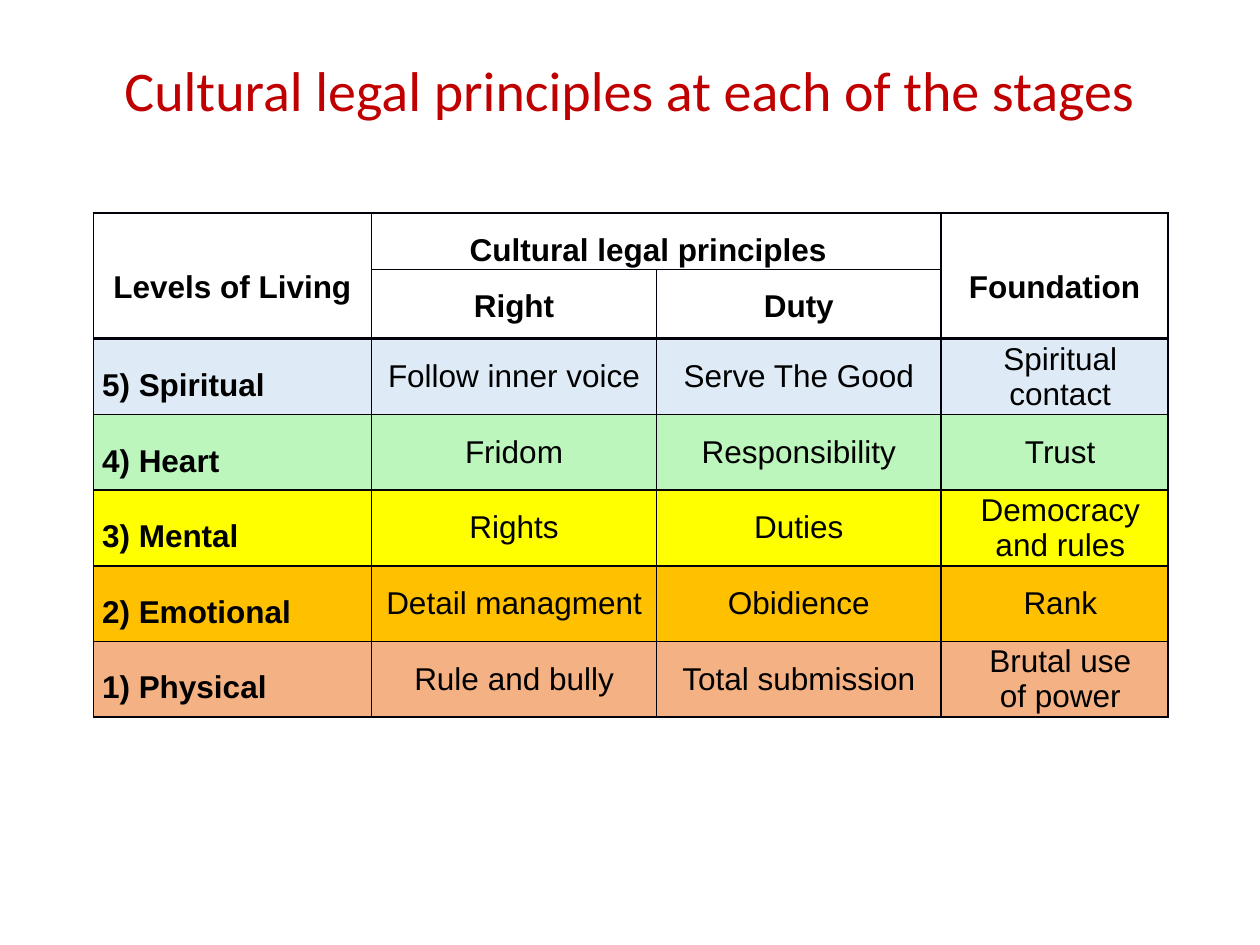
from lxml.etree import SubElement
from pptx import Presentation
from pptx.dml.color import RGBColor
from pptx.enum.text import MSO_ANCHOR, PP_ALIGN
from pptx.oxml.ns import qn
from pptx.util import Inches, Pt

TITLE = "Cultural legal principles at each of the stages"
COLUMN_WIDTHS = [2.21, 2.26, 2.26, 1.8]
BORDER = "00000A"
STAGES = [
    ("DEEBF7", "5) Spiritual", "Follow inner voice", "Serve The Good", "Spiritual contact"),
    ("BCF6BD", "4) Heart", "Fridom", "Responsibility", "Trust"),
    ("FFFF00", "3) Mental", "Rights", "Duties", "Democracy and rules"),
    ("FFC000", "2) Emotional", "Detail managment", "Obidience", "Rank"),
    ("F4B183", "1) Physical", "Rule and bully", "Total submission", "Brutal use\vof power"),
]


def color(hex_value):
    return RGBColor.from_string(hex_value)


def apply(target, formats):
    for name, value in formats.items():
        setattr(target, name, value)


def add_borders(cell):
    properties = cell._tc.get_or_add_tcPr()
    for position, side in enumerate(("a:lnL", "a:lnR", "a:lnT", "a:lnB")):
        line = SubElement(properties, qn(side), w=str(Pt(1)))
        solid = SubElement(line, qn("a:solidFill"))
        SubElement(solid, qn("a:srgbClr"), val=BORDER)
        properties.remove(line)
        properties.insert(position, line)  # borders come before the fill


def add_grid(slide, left, top, width, row_heights):
    """Add an unstyled, bordered table with the shared columns."""
    frame = slide.shapes.add_table(
        len(row_heights), len(COLUMN_WIDTHS), Inches(left), Inches(top),
        Inches(width), Inches(sum(row_heights)))
    table = frame.table
    apply(table, {"first_row": False, "horz_banding": False})
    for column, column_width in zip(table.columns, COLUMN_WIDTHS):
        column.width = Inches(column_width)
    for row, height in zip(table.rows, row_heights):
        row.height = Inches(height)
    for cell in table.iter_cells():
        cell.fill.background()
        apply(cell, {"margin_top": 0, "margin_bottom": 0})
        add_borders(cell)
    return table


def write_cell(cell, text, bold=False, align=PP_ALIGN.CENTER, spacing=1.0,
               left=0.07, right=0.07, top=0):
    apply(cell, {"text": text, "vertical_anchor": MSO_ANCHOR.MIDDLE,
                 "margin_left": Inches(left), "margin_right": Inches(right),
                 "margin_top": Inches(top)})
    paragraph = cell.text_frame.paragraphs[0]
    apply(paragraph, {"alignment": align, "line_spacing": spacing})
    for run in paragraph.runs:
        apply(run.font, {"name": "Arial", "size": Pt(18), "bold": bold})
        run.font.color.rgb = color("000000")


def add_title(slide, left, top, width, height):
    title = slide.shapes.title
    apply(title, {"left": Inches(left), "top": Inches(top),
                  "width": Inches(width), "height": Inches(height)})
    frame = title.text_frame
    apply(frame, {"text": TITLE, "word_wrap": True, "vertical_anchor": MSO_ANCHOR.TOP})
    paragraph = frame.paragraphs[0]
    paragraph.alignment = PP_ALIGN.CENTER
    apply(paragraph.font, {"name": "Calibri", "size": Pt(32)})
    paragraph.font.color.rgb = color("C00000")


def add_header(slide, left, top, width):
    table = add_grid(slide, left, top, width, [0.45, 0.54])
    # Outer headings span both rows, the shared heading spans two columns
    for first, last in (((0, 0), (1, 0)), ((0, 1), (0, 2)), ((0, 3), (1, 3))):
        table.cell(*first).merge(table.cell(*last))
    write_cell(table.cell(0, 0), "Levels of Living", True, spacing=1.5, top=0.05)
    write_cell(table.cell(0, 1), "Cultural legal principles", True, spacing=1.5, right=0.2)
    write_cell(table.cell(0, 3), "Foundation", True, spacing=1.5, left=0.01, right=0.01, top=0.05)
    for column, heading in enumerate(("Right", "Duty"), start=1):
        write_cell(table.cell(1, column), heading, True, top=0.05)


def add_stages(slide, left, top, width):
    table = add_grid(slide, left, top, width, [0.6] * len(STAGES))
    for row, (fill, level, right, duty, foundation) in zip(table.rows, STAGES):
        level_cell, right_cell, duty_cell, foundation_cell = row.cells
        write_cell(level_cell, level, True, PP_ALIGN.LEFT, spacing=1.5)
        write_cell(right_cell, right)
        write_cell(duty_cell, duty)
        write_cell(foundation_cell, foundation, left=0.1, right=0.01)
        for cell in row.cells:
            cell.fill.solid()
            cell.fill.fore_color.rgb = color(fill)


def main():
    presentation = Presentation()
    apply(presentation, {"slide_width": Inches(10), "slide_height": Inches(7.5)})
    slide = presentation.slides.add_slide(presentation.slide_layouts[5])
    add_header(slide, 0.74, 1.69, 8.52)
    add_title(slide, 0.16, 0.39, 9.68, 0.64)
    add_stages(slide, 0.74, 2.69, 8.52)
    presentation.save("out.pptx")


if __name__ == "__main__":
    main()
